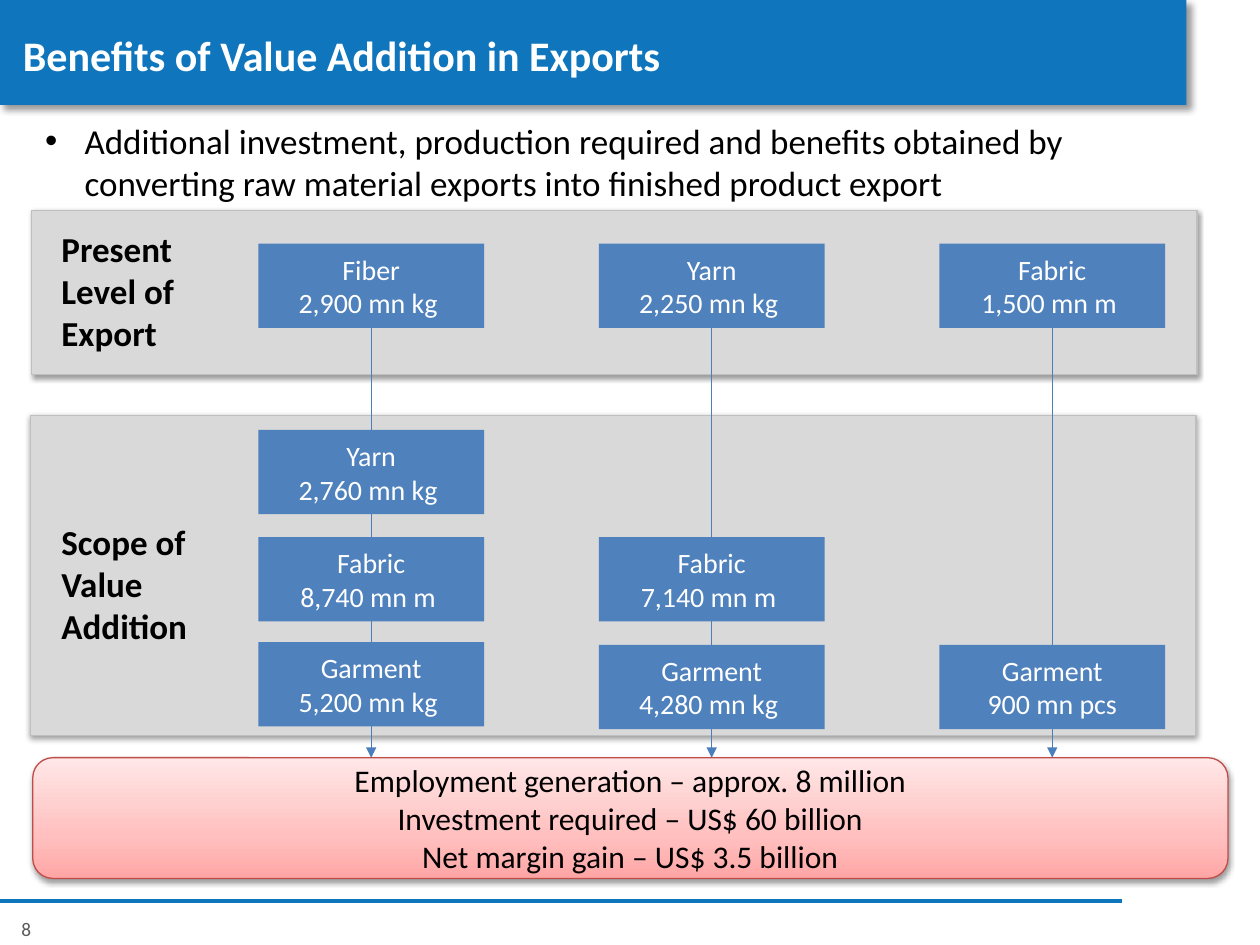
from lxml.etree import SubElement
from pptx import Presentation
from pptx.dml.color import RGBColor
from pptx.enum.shapes import MSO_CONNECTOR, MSO_SHAPE
from pptx.enum.text import MSO_ANCHOR, PP_ALIGN
from pptx.oxml import parse_xml
from pptx.oxml.ns import nsdecls, qn
from pptx.util import Pt

BLUE = RGBColor(0x0F, 0x75, 0xBC)
STAGE_BLUE = RGBColor(0x4F, 0x81, 0xBD)
ARROW_BLUE = RGBColor(0x4B, 0x7E, 0xBC)
PANEL_GRAY = RGBColor(0xD9, 0xD9, 0xD9)
PANEL_EDGE = RGBColor(0xBF, 0xBF, 0xBF)
NUMBER_GRAY = RGBColor(0x59, 0x59, 0x59)
RED_EDGE = RGBColor(0xBF, 0x4C, 0x48)
PINKS = [
    (0, RGBColor(0xFF, 0xA6, 0xA5)),
    (35, RGBColor(0xFF, 0xC0, 0xBF)),
    (100, RGBColor(0xFF, 0xE7, 0xE7)),
]
BLACK = RGBColor(0, 0, 0)
WHITE = RGBColor(255, 255, 255)

# Shadow: opacity %, blur, distance, direction in degrees
HEADER_SHADOW = (40, 4, 3, 45)
PANEL_SHADOW = (38, 3.1, 1.6, 90)

STAGE_WIDTH, STAGE_HEIGHT = 129, 48.2
FIRST_COLUMN, COLUMN_STEP = 147.6, 194.6
EXPORT_TOP, RESULT_TOP = 139.2, 433

# Each column: (top, product, quantity), from export down to garment
COLUMNS = [
    [(EXPORT_TOP, "Fiber", "2,900 mn kg "), (245.7, "Yarn", "2,760 mn kg "),
     (306.9, "Fabric", "8,740 mn m "), (367, "Garment", "5,200 mn kg ")],
    [(EXPORT_TOP, "Yarn", "2,250 mn kg "), (306.9, "Fabric", "7,140 mn m "),
     (368.5, "Garment", "4,280 mn kg ")],
    [(EXPORT_TOP, "Fabric", "1,500 mn m "), (368.5, "Garment", "900 mn pcs")],
]


def write(shape, text, size=20, color=BLACK, bold=False,
          align=PP_ALIGN.LEFT, anchor=MSO_ANCHOR.TOP, bullet_indent=None):
    frame = shape.text_frame
    frame.word_wrap = True
    frame.vertical_anchor = anchor
    frame.text = text
    for para in frame.paragraphs:
        para.alignment = align
        if bullet_indent:
            properties = para._p.get_or_add_pPr()
            properties.set("marL", str(Pt(bullet_indent)))
            properties.set("indent", str(-Pt(bullet_indent)))
            SubElement(properties, qn("a:buFont"), typeface="Arial")
            SubElement(properties, qn("a:buChar"), char="•")
        for span in para.runs:
            span.font.name = "Calibri"
            span.font.size = Pt(size)
            span.font.bold = bold
            span.font.color.rgb = color


def add_text(page, left, top, width, height, text, **style):
    box = page.shapes.add_textbox(Pt(left), Pt(top), Pt(width), Pt(height))
    write(box, text, **style)


def add_block(page, left, top, width, height, fill=None, edge=None,
              shadow=None, kind=MSO_SHAPE.RECTANGLE):
    block = page.shapes.add_shape(kind, Pt(left), Pt(top), Pt(width), Pt(height))
    block.shadow.inherit = False
    if fill is not None:
        block.fill.solid()
        block.fill.fore_color.rgb = fill
    if edge is None:
        block.line.fill.background()
    else:
        block.line.color.rgb = edge
        block.line.width = Pt(0.75)
    if shadow:
        cast_shadow(block, *shadow)
    return block


def cast_shadow(block, opacity, blur, distance, direction):
    effects = block._element.spPr.find(qn("a:effectLst"))
    effects.append(parse_xml(
        f'<a:outerShdw {nsdecls("a")} blurRad="{Pt(blur)}" dist="{Pt(distance)}" '
        f'dir="{direction * 60000}" algn="tl" rotWithShape="0">'
        f'<a:srgbClr val="{BLACK}"><a:alpha val="{opacity * 1000}"/></a:srgbClr>'
        '</a:outerShdw>'))


def fill_upward(block, stops):
    marks = "".join(f'<a:gs pos="{place * 1000}"><a:srgbClr val="{color}"/></a:gs>'
                    for place, color in stops)
    geometry = block._element.spPr.find(qn("a:prstGeom"))
    geometry.addnext(parse_xml(
        f'<a:gradFill {nsdecls("a")} rotWithShape="1"><a:gsLst>{marks}</a:gsLst>'
        '<a:lin ang="16200000" scaled="0"/></a:gradFill>'))


def add_line(page, start, end, color, width, arrow=False):
    line = page.shapes.add_connector(
        MSO_CONNECTOR.STRAIGHT, *(Pt(value) for value in (*start, *end)))
    line.line.color.rgb = color
    line.line.width = Pt(width)
    if arrow:
        SubElement(line.line._get_or_add_ln(), qn("a:tailEnd"), type="triangle")
    SubElement(line._element.spPr, qn("a:effectLst"))


def add_column(page, left, stages):
    center = left + STAGE_WIDTH / 2
    add_line(page, (center, EXPORT_TOP + STAGE_HEIGHT), (center, RESULT_TOP),
             ARROW_BLUE, 0.75, arrow=True)
    for top, product, quantity in stages:
        stage = add_block(page, left, top, STAGE_WIDTH, STAGE_HEIGHT, STAGE_BLUE)
        write(stage, f"{product}\n{quantity}", size=16, color=WHITE,
              align=PP_ALIGN.CENTER, anchor=MSO_ANCHOR.MIDDLE)


def main():
    deck = Presentation()
    deck.slide_width, deck.slide_height = Pt(720), Pt(540)
    page = deck.slides.add_slide(deck.slide_layouts[6])

    # Header and footer
    add_block(page, 0, 0, 678, 60, BLUE, shadow=HEADER_SHADOW)
    add_text(page, 6, 12.5, 654, 38, "Benefits of Value Addition in Exports",
             size=24, color=WHITE, bold=True, anchor=MSO_ANCHOR.MIDDLE)
    add_line(page, (0, 515), (641, 515), BLUE, 2.25)
    add_text(page, 0, 520.6, 30, 21, "8", size=11, color=NUMBER_GRAY,
             align=PP_ALIGN.CENTER)

    # Introduction
    add_text(page, 18.7, 64.8, 683, 55.7,
             "Additional investment, production required and benefits obtained by "
             "converting raw material exports into finished product export",
             bullet_indent=22.5)

    # Panels with their headings
    add_block(page, 18, 120.2, 666, 94, PANEL_GRAY, PANEL_EDGE, PANEL_SHADOW)
    add_block(page, 17.5, 237.3, 666, 183, PANEL_GRAY, PANEL_EDGE, PANEL_SHADOW)
    for top, heading in [(126.5, "Present Level of Export"),
                         (294, "Scope of Value Addition")]:
        add_text(page, 28, top, 114.5, 80, heading, bold=True)

    # Value chains
    for index, stages in enumerate(COLUMNS):
        add_column(page, FIRST_COLUMN + index * COLUMN_STEP, stages)

    # Result
    result = add_block(page, 18.7, RESULT_TOP, 683, 69, edge=RED_EDGE,
                       shadow=PANEL_SHADOW, kind=MSO_SHAPE.ROUNDED_RECTANGLE)
    fill_upward(result, PINKS)
    write(result, "Employment generation – approx. 8 million\n"
                  "Investment required – US$ 60 billion\n"
                  "Net margin gain – US$ 3.5 billion",
          size=18, align=PP_ALIGN.CENTER, anchor=MSO_ANCHOR.MIDDLE)

    deck.save("out.pptx")


if __name__ == "__main__":
    main()
